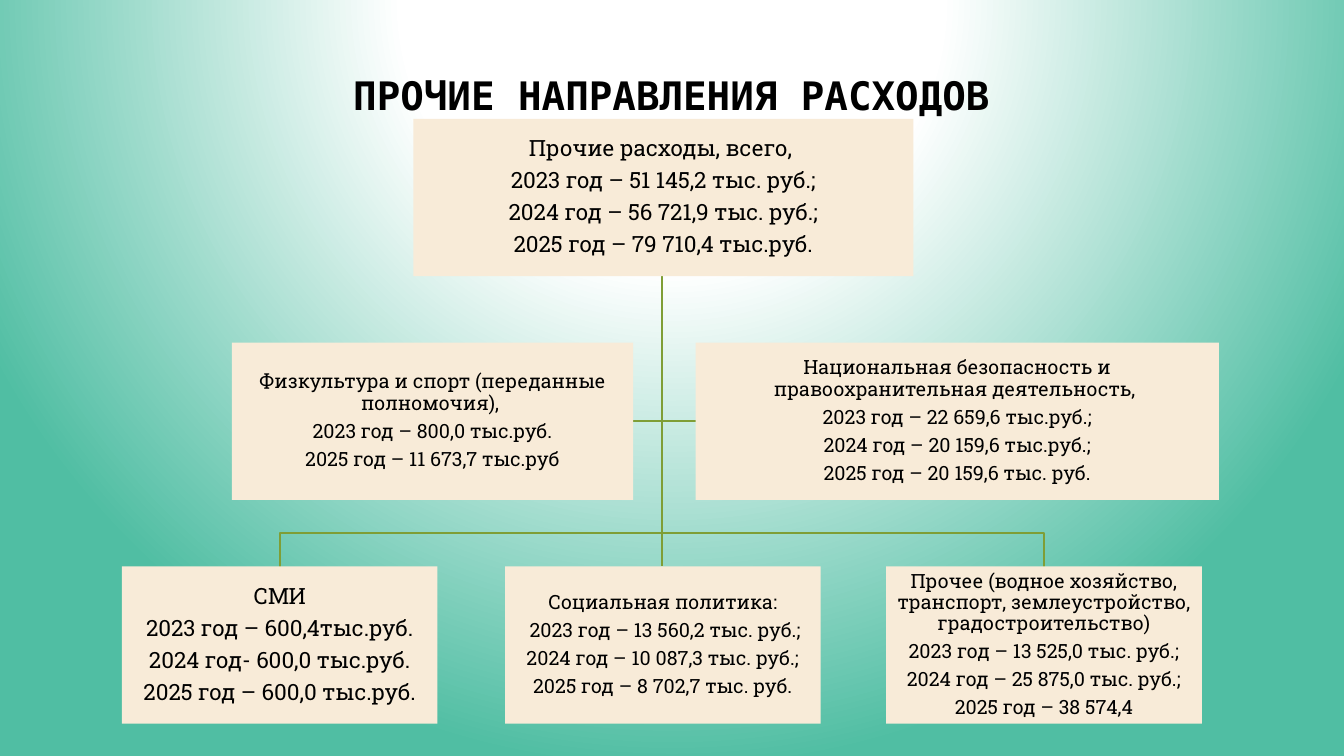
"""Build a slide showing other budget expenditure as a tree of boxes."""
from dataclasses import dataclass

from lxml import etree
from pptx import Presentation, oxml
from pptx import util as u
from pptx.dml.color import RGBColor
from pptx.enum import shapes, text
from pptx.oxml import ns

BLACK = RGBColor(0x00, 0x00, 0x00)
CREAM = RGBColor(0xF8, 0xEB, 0xD8)
OLIVE = RGBColor(0x7F, 0x9E, 0x36)
GLOW_STOPS = {0: "FFFFFF", 35: "FFFFFF", 100: "50BEA3"}

BOX_HEIGHT = 1.56
TOP_ROW, MIDDLE_ROW, BOTTOM_ROW = 1.18, 3.4, 5.62
TRUNK_X = 6.57
TRUNK_TOP = TOP_ROW + BOX_HEIGHT
BRANCH_Y = MIDDLE_ROW + BOX_HEIGHT / 2
FORK_Y = 5.29

BOX_FRAME = {
    "word_wrap": True,
    "vertical_anchor": text.MSO_ANCHOR.MIDDLE,
    **{f"margin_{side}": u.Inches(0.01) for side in ("left", "top", "right", "bottom")},
}
PARAGRAPH = {"alignment": text.PP_ALIGN.CENTER, "line_spacing": 0.9}


@dataclass(frozen=True)
class Expense:
    """A spending item with its box position and yearly amounts."""

    left: float
    top: float
    width: float
    size: int
    lines: tuple[str, ...]

    @property
    def centre(self) -> float:
        """Return the horizontal centre of the box."""
        return self.left + self.width / 2


TOTAL = Expense(4.1, TOP_ROW, 4.96, 16, (
    "Прочие расходы, всего, ",
    "2023 год – 51 145,2 тыс. руб.;",
    "2024 год – 56 721,9 тыс. руб.;",
    "2025 год – 79 710,4 тыс.руб.",
))
MEDIA = Expense(1.21, BOTTOM_ROW, 3.13, 16, (
    "СМИ",
    "2023 год – 600,4тыс.руб.",
    "2024 год- 600,0 тыс.руб.",
    "2025 год – 600,0 тыс.руб.",
))
SOCIAL = Expense(5.01, BOTTOM_ROW, 3.13, 14, (
    "Социальная политика:",
    " 2023 год – 13 560,2 тыс. руб.;",
    "2024 год – 10 087,3 тыс. руб.;",
    "2025 год – 8 702,7 тыс. руб.",
))
OTHER = Expense(8.79, BOTTOM_ROW, 3.13, 14, (
    "Прочее (водное хозяйство, транспорт, землеустройство, градостроительство)",
    "2023 год – 13 525,0 тыс. руб.;",
    "2024 год – 25 875,0 тыс. руб.;",
    "2025 год – 38 574,4",
))
SPORT = Expense(2.3, MIDDLE_ROW, 3.98, 14, (
    "Физкультура и спорт (переданные полномочия), ",
    "2023 год – 800,0 тыс.руб.",
    "2025 год – 11 673,7 тыс.руб",
))
SECURITY = Expense(6.9, MIDDLE_ROW, 5.19, 14, (
    "Национальная безопасность и правоохранительная деятельность, ",
    "2023 год – 22 659,6 тыс.руб.;",
    "2024 год – 20 159,6 тыс.руб.;",
    "2025 год – 20 159,6 тыс. руб.",
))


def apply(target: object, values: dict) -> None:
    """Set each named attribute on the target."""
    for name, value in values.items():
        setattr(target, name, value)


def style_font(font, face: str, size: int, bold: bool) -> None:
    """Give a font its face, size, weight and black colour."""
    apply(font, {"name": face, "size": u.Pt(size), "bold": bold})
    font.color.rgb = BLACK


def paint_background(slide) -> None:
    """Fill the background with a round glow from white to green."""
    stops = "".join(
        f'<a:gs pos="{position * 1000}"><a:srgbClr val="{colour}"/></a:gs>'
        for position, colour in GLOW_STOPS.items()
    )
    glow = oxml.parse_xml(
        f'<p:bg {ns.nsdecls("p", "a")}><p:bgPr><a:gradFill rotWithShape="1">'
        f'<a:gsLst>{stops}</a:gsLst><a:path path="circle">'
        '<a:fillToRect l="50000" t="-80000" r="50000" b="180000"/></a:path>'
        "</a:gradFill><a:effectLst/></p:bgPr></p:bg>"
    )
    slide.element.cSld.insert(0, glow)


def write_title(slide, heading: str) -> None:
    """Place and format the slide title."""
    title = slide.shapes.title
    apply(title, {"left": u.Inches(1), "top": u.Inches(0.67),
                  "width": u.Inches(11.32), "height": u.Inches(0.6)})
    title.text_frame.text = heading
    apply(title.text_frame, {"word_wrap": True, "auto_size": text.MSO_AUTO_SIZE.NONE,
                             "vertical_anchor": text.MSO_ANCHOR.MIDDLE})
    line = title.text_frame.paragraphs[0]
    apply(line, PARAGRAPH)
    style_font(line.runs[0].font, "DejaVu Sans Mono", 28, True)


def draw_branch(slide, points: list[tuple[float, float]]) -> None:
    """Draw an open line that bends at each inner point."""
    corners = [(u.Inches(x), u.Inches(y)) for x, y in points]
    if len(corners) == 2:
        branch = slide.shapes.add_connector(
            shapes.MSO_CONNECTOR.STRAIGHT, *corners[0], *corners[1])
        etree.SubElement(branch.line._get_or_add_ln().getparent(), ns.qn("a:effectLst"))
    else:
        builder = slide.shapes.build_freeform(*corners[0])
        builder.add_line_segments(corners[1:], close=False)
        branch = builder.convert_to_shape()
        branch.fill.background()
        branch.shadow.inherit = False
    branch.line.color.rgb = OLIVE
    branch.line.width = u.Pt(1.5)


def draw_expense(slide, expense: Expense) -> None:
    """Draw one box with its centred lines of text."""
    box = slide.shapes.add_shape(
        shapes.MSO_SHAPE.RECTANGLE, u.Inches(expense.left), u.Inches(expense.top),
        u.Inches(expense.width), u.Inches(BOX_HEIGHT))
    box.shadow.inherit = False
    box.fill.solid()
    box.fill.fore_color.rgb = CREAM
    box.line.fill.background()
    apply(box.text_frame, BOX_FRAME)
    box.text_frame.text = "\n".join(expense.lines)
    for line in box.text_frame.paragraphs:
        apply(line, PARAGRAPH)
        gap = etree.SubElement(line._p.get_or_add_pPr(), ns.qn("a:spcAft"))
        etree.SubElement(gap, ns.qn("a:spcPct"), val="35000")
        style_font(line.runs[0].font, "Roboto Slab", expense.size, False)


def main() -> None:
    """Build and save the slide."""
    deck = Presentation()
    apply(deck, {"slide_width": u.Inches(13.33), "slide_height": u.Inches(7.5)})
    slide = deck.slides.add_slide(deck.slide_layouts[5])
    paint_background(slide)
    write_title(slide, "ПРОЧИЕ НАПРАВЛЕНИЯ РАСХОДОВ")

    trunk = (TRUNK_X, TRUNK_TOP)
    for inner_edge in (SECURITY.left, SPORT.left + SPORT.width):
        draw_branch(slide, [trunk, (TRUNK_X, BRANCH_Y), (inner_edge, BRANCH_Y)])
    for leaf in (OTHER, MEDIA):
        draw_branch(slide, [trunk, (TRUNK_X, FORK_Y), (leaf.centre, FORK_Y),
                            (leaf.centre, BOTTOM_ROW)])
    draw_branch(slide, [trunk, (TRUNK_X, BOTTOM_ROW)])

    for expense in (TOTAL, MEDIA, SOCIAL, OTHER, SPORT, SECURITY):
        draw_expense(slide, expense)
    deck.save("out.pptx")


if __name__ == "__main__":
    main()
